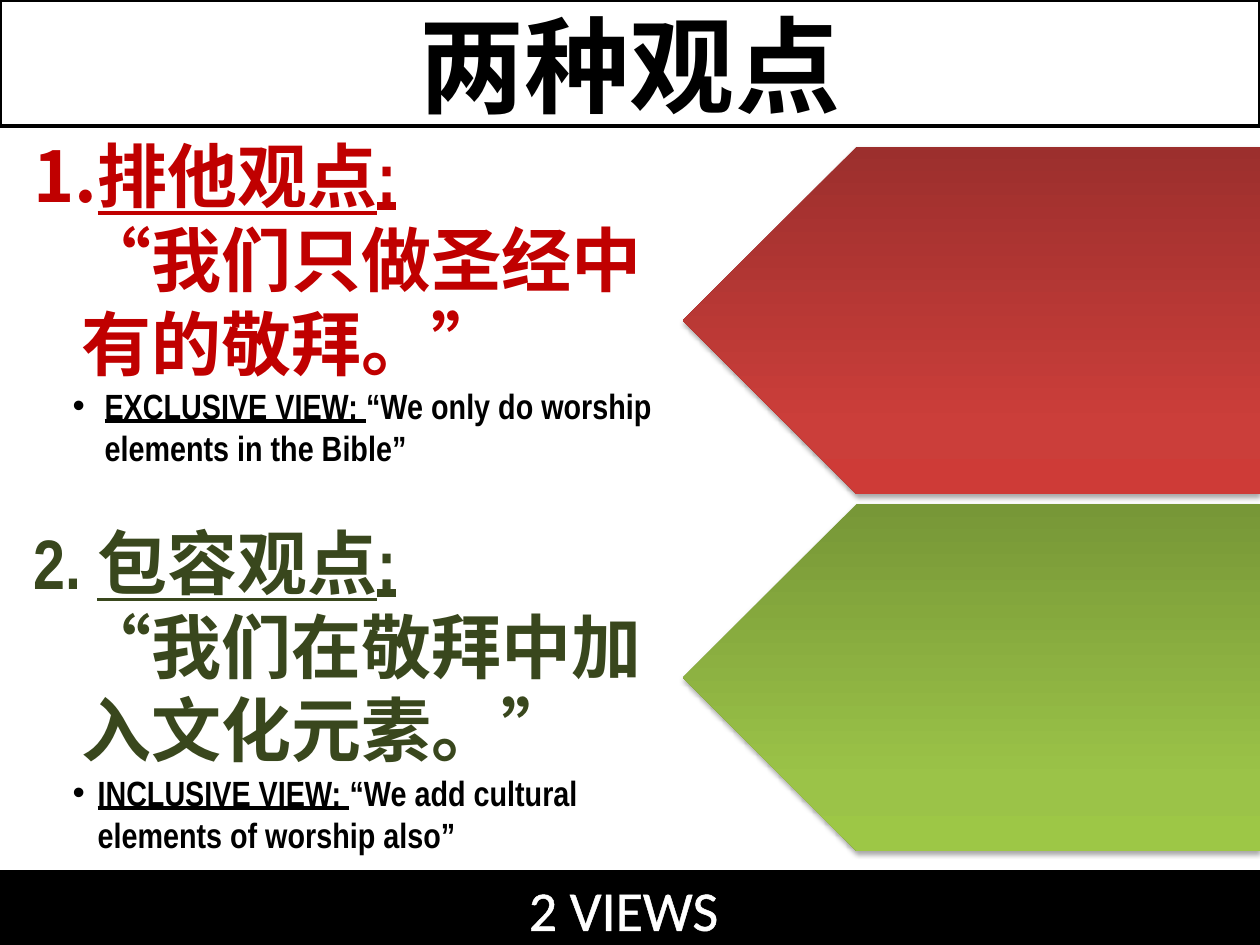
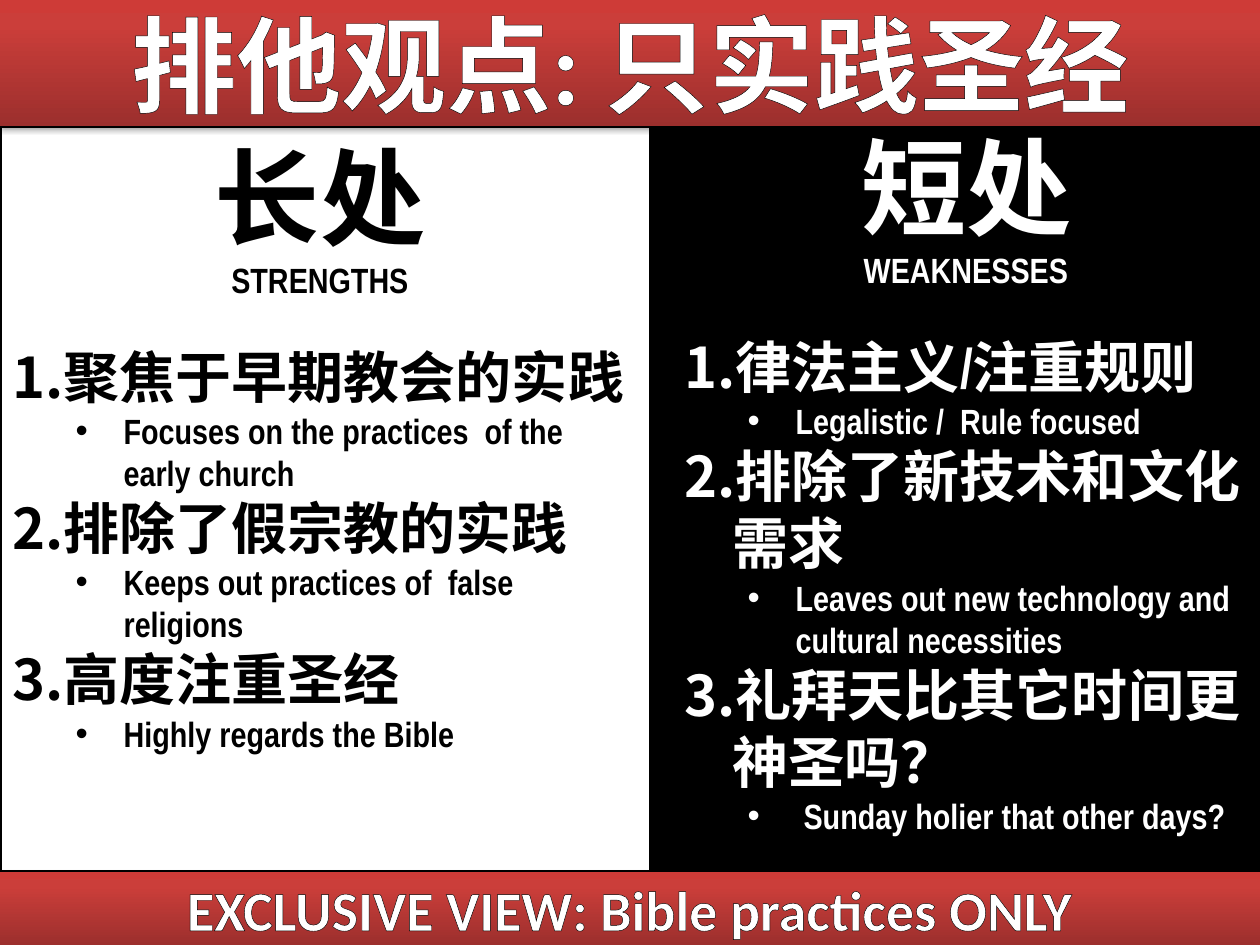
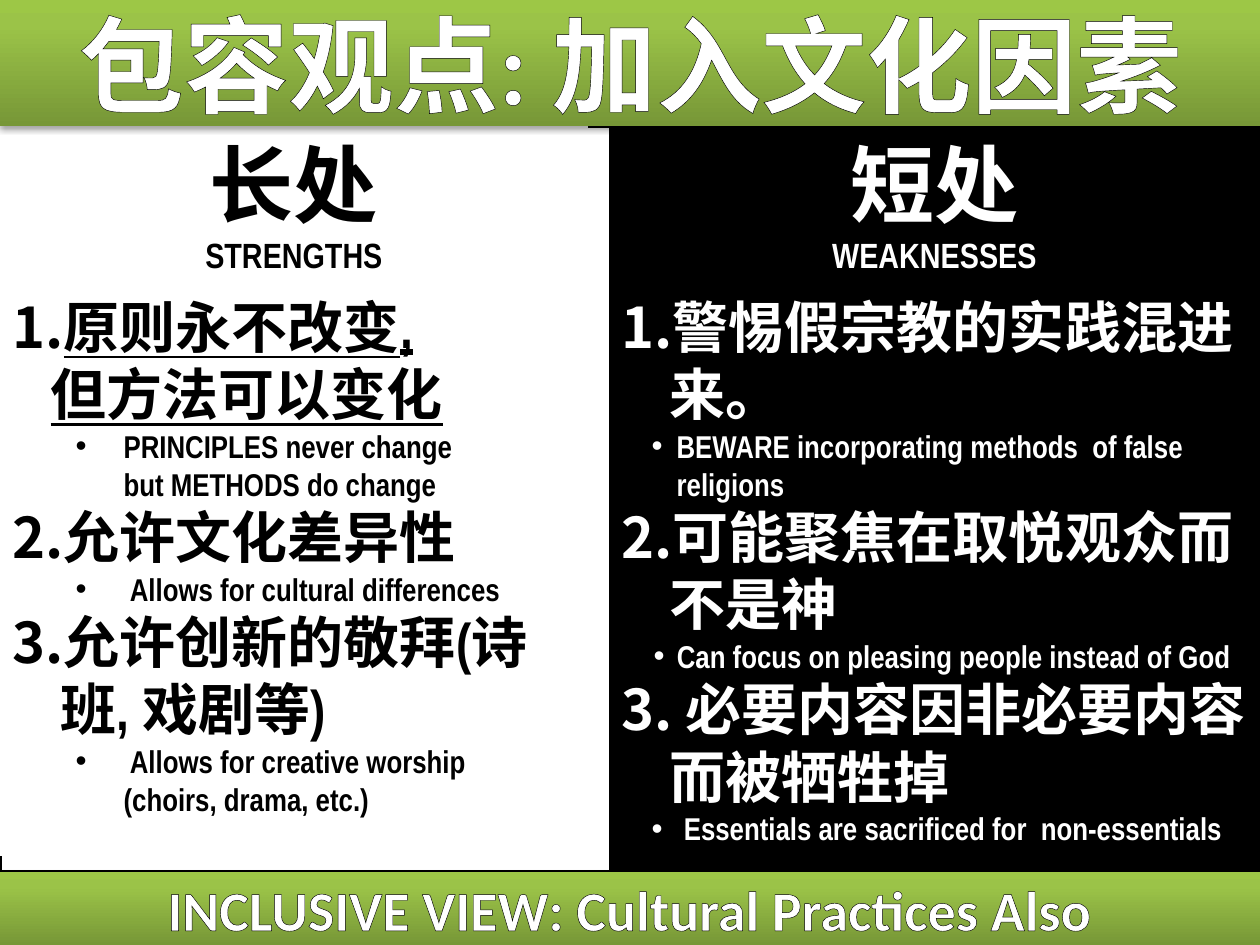
from copy import deepcopy
from dataclasses import dataclass

from lxml import etree
from pptx import Presentation
from pptx.dml.color import RGBColor
from pptx.enum.shapes import MSO_SHAPE
from pptx.enum.text import MSO_ANCHOR, MSO_AUTO_SIZE, PP_ALIGN
from pptx.oxml.ns import qn
from pptx.util import Emu, Inches, Pt

RECTANGLE, PENTAGON = MSO_SHAPE.RECTANGLE, MSO_SHAPE.PENTAGON
TOP, MIDDLE = MSO_ANCHOR.TOP, MSO_ANCHOR.MIDDLE
LEFT, CENTER = PP_ALIGN.LEFT, PP_ALIGN.CENTER
NO_AUTOFIT = MSO_AUTO_SIZE.NONE

PX_PER_INCH = 126
SLIDE_W, SLIDE_H = 1260, 945
BAND_H, FOOTER_TOP = 126, 872
PANEL_H = FOOTER_TOP - BAND_H

COLORS = {
    "black": "000000",
    "white": "FFFFFF",
    "exclusive": "C00000",
    "inclusive": "39471D",
    "title_edge": "5E457C",
}
GRADIENTS = {
    "red": ("9C2F2D", "CB3E3A", "CE3B37"),
    "green": ("779737", "9BC348", "9DC746"),
}
GRADIENT_STOPS = (0, 0.8, 1)
BAND_FONT, LIST_FONT = "Calibri", "Arial Narrow"


@dataclass
class Line:
    """One list paragraph; runs are (text, underlined), lengths are px."""
    runs: list
    size: int
    color: str = "black"
    level: int = 0
    margin: int = 0
    indent: int = 0
    bullet: str = ""
    align: int = LEFT
    before: int = 0


def px(length):
    return Emu(round(length * Inches(1) / PX_PER_INCH))


def rgb(name):
    return RGBColor.from_string(COLORS[name])


def place(shape, left, top, width, height):
    shape.left, shape.top = px(left), px(top)
    shape.width, shape.height = px(width), px(height)


def paint(shape, fill, outlined=False):
    """Fill with a plain colour, or with a gradient that casts a shadow."""
    shape.shadow.inherit = False
    if fill in GRADIENTS:
        paint_gradient(shape, GRADIENTS[fill])
        add_shadow(shape)
    else:
        shape.fill.solid()
        shape.fill.fore_color.rgb = rgb(fill)
    if outlined:
        shape.line.color.rgb = rgb("black")
        shape.line.width = Pt(2)
    else:
        shape.line.fill.background()


def paint_gradient(shape, hues):
    shape.fill.gradient()
    shape.fill.gradient_angle = 90
    stop_list = shape._element.spPr.find(".//" + qn("a:gsLst"))
    stop_list.append(deepcopy(stop_list[-1]))
    for stop, hue, position in zip(shape.fill.gradient_stops, hues, GRADIENT_STOPS):
        stop.color.rgb = RGBColor.from_string(hue)
        stop.position = position


def add_shadow(shape):
    effects = shape._element.spPr.find(qn("a:effectLst"))
    shadow = etree.SubElement(effects, qn("a:outerShdw"), blurRad=str(Pt(3.1)),
                              dist=str(Pt(1.8)), dir="5400000", rotWithShape="0")
    hue = etree.SubElement(shadow, qn("a:srgbClr"), val=COLORS["black"])
    etree.SubElement(hue, qn("a:alpha"), val="35000")


def outline_text(run, color, width):
    edge = etree.Element(qn("a:ln"), w=str(Pt(width)))
    fill = etree.SubElement(edge, qn("a:solidFill"))
    etree.SubElement(fill, qn("a:srgbClr"), val=COLORS[color])
    run.font._element.insert(0, edge)


def write_band(shape, text, size, color, edge, edge_width=1.45, bold=True):
    frame = shape.text_frame
    frame.text = text
    frame.word_wrap = True
    frame.auto_size = NO_AUTOFIT
    frame.vertical_anchor = MIDDLE
    paragraph = frame.paragraphs[0]
    paragraph.alignment = CENTER
    run = paragraph.runs[0]
    run.font.name, run.font.size, run.font.bold = BAND_FONT, Pt(size), bold
    run.font.color.rgb = rgb(color)
    outline_text(run, edge, edge_width)


def add_title(slide, text, fill, color, edge, edge_width=1.45, outlined=False):
    title = slide.shapes.title
    place(title, 0, 0, SLIDE_W, BAND_H)
    paint(title, fill, outlined)
    write_band(title, text, 60, color, edge, edge_width)


def add_block(slide, kind, box, fill, outlined=False):
    block = slide.shapes.add_shape(kind, *map(px, box))
    paint(block, fill, outlined)
    return block


def add_footer(slide, text, fill, edge, bold=True, outlined=False):
    box = (0, FOOTER_TOP, SLIDE_W, SLIDE_H - FOOTER_TOP)
    footer = add_block(slide, RECTANGLE, box, fill, outlined)
    write_band(footer, text, 32, "white", edge, bold=bold)


def add_panels(slide, *panels):
    """Put (left, width, fill, outlined) panels behind the text, back to front."""
    for depth, (left, width, fill, outlined) in enumerate(panels):
        panel = add_block(slide, RECTANGLE, (left, BAND_H, width, PANEL_H), fill, outlined)
        slide.shapes._spTree.insert(2 + depth, panel._element)


def set_bullet(paragraph, bullet):
    properties = paragraph._p.get_or_add_pPr()
    if bullet == "1.":
        etree.SubElement(properties, qn("a:buFont"), typeface="+mj-lt")
        etree.SubElement(properties, qn("a:buAutoNum"), type="arabicPeriod")
    elif bullet:
        etree.SubElement(properties, qn("a:buFont"), typeface="Arial")
        etree.SubElement(properties, qn("a:buChar"), char=bullet)
    else:
        etree.SubElement(properties, qn("a:buNone"))


def write_line(paragraph, line):
    paragraph.level = line.level
    paragraph.alignment = line.align
    paragraph.space_before, paragraph.space_after = Pt(line.before), Pt(0)
    properties = paragraph._p.get_or_add_pPr()
    properties.set("marL", str(px(line.margin)))
    properties.set("indent", str(px(line.indent)))
    set_bullet(paragraph, line.bullet)
    if len(line.runs) == 1:
        paragraph.text = line.runs[0][0]
    else:
        for text, _ in line.runs:
            paragraph.add_run().text = text
    underlines = [underlined for _, underlined in line.runs]
    for index, run in enumerate(paragraph.runs):
        font = run.font
        font.name, font.size, font.bold = LIST_FONT, Pt(line.size), True
        font.underline = underlines[min(index, len(underlines) - 1)]
        font.color.rgb = rgb(line.color)


def fill_list(body, box, lines):
    place(body, *box)
    frame = body.text_frame
    frame.word_wrap = True
    frame.auto_size = NO_AUTOFIT
    frame.vertical_anchor = TOP
    for index, line in enumerate(lines):
        write_line(frame.add_paragraph() if index else frame.paragraphs[0], line)


def point(text, color, underlined=False, before=0):
    return Line([(text, underlined)], 32, color, 0, 48, -48, "1.", before=before)


def gloss(text, size, color, margin=111, indent=-48):
    """English rendering below a Chinese point."""
    return Line([(text, False)], size, color, 1, margin, indent, "•")


def heading(chinese, english, size, color):
    return [Line([(chinese, False)], size, color, align=CENTER),
            Line([(english, False)], 20, color, align=CENTER)]


def quote(text, color):
    return Line([(text, False)], 40, color, margin=48)


def view_gloss(label, text, margin, indent):
    return Line([(label, True), (text, False)], 20, "black", 1, margin, indent, "•")


def build_two_views(prs):
    slide = prs.slides.add_slide(prs.slide_layouts[1])
    add_title(slide, "两种观点", "white", "black", "title_edge", 0.71, outlined=True)
    fill_list(slide.placeholders[1], (21, 126, 662, 742), [
        Line([("排他观点:", True)], 40, "exclusive", 0, 48, -48, "1."),
        quote("“我们只做圣经中有的敬拜。”", "exclusive"),
        view_gloss("EXCLUSIVE VIEW: ", "“We only do worship elements in the Bible”", 71, -32),
        Line([("2. ", False), ("包容观点:", True)], 40, "inclusive", 0, 48, -48, before=29),
        quote("“我们在敬拜中加入文化元素。”", "inclusive"),
        view_gloss("INCLUSIVE VIEW: ", "“We add cultural elements of worship also”", 64, -25),
    ])
    for top, fill in ((147, "red"), (504, "green")):
        arrow = add_block(slide, PENTAGON, (683, top, 577, 347), fill)
        arrow.rotation = 180
    add_footer(slide, "2 VIEWS ", "black", "white", bold=False, outlined=True)


def build_exclusive_view(prs):
    slide = prs.slides.add_slide(prs.slide_layouts[3])
    add_panels(slide, (651, 609, "black", False), (0, 651, "white", True))
    add_title(slide, "排他观点: 只实践圣经", "red", "white", "black")
    fill_list(slide.placeholders[1], (0, 126, 640, 640), [
        *heading("长处", "STRENGTHS", 60, "black"),
        point("聚焦于早期教会的实践", "black", before=24),
        gloss("Focuses on the practices  of the early church", 20, "black"),
        point("排除了假宗教的实践", "black"),
        gloss("Keeps out practices of  false religions", 20, "black"),
        point("高度注重圣经", "black"),
        gloss("Highly regards the Bible", 20, "black"),
    ])
    fill_list(slide.placeholders[2], (672, 116, 588, 733), [
        *heading("短处", "WEAKNESSES", 60, "white"),
        point("律法主义/注重规则", "white", before=24),
        gloss("Legalistic /  Rule focused", 20, "white"),
        point("排除了新技术和文化需求", "white"),
        gloss("Leaves out new technology and cultural necessities", 20, "white"),
        point("礼拜天比其它时间更神圣吗？", "white"),
        gloss(" Sunday holier that other days?", 20, "white"),
    ])
    add_footer(slide, "EXCLUSIVE VIEW: Bible practices ONLY", "red", "black")


def build_inclusive_view(prs):
    slide = prs.slides.add_slide(prs.slide_layouts[3])
    add_panels(slide, (0, 651, "white", True), (609, 651, "black", False))
    strengths, weaknesses = slide.placeholders[1], slide.placeholders[2]
    fill_list(strengths, (0, 126, 588, 730), [
        *heading("长处", "STRENGTHS", 48, "black"),
        point("原则永不改变,", "black", underlined=True, before=10),
        Line([("但方法可以变化", True)], 32, margin=38),
        gloss("PRINCIPLES never change\vbut METHODS do change", 18, "black"),
        point("允许文化差异性", "black"),
        gloss(" Allows for cultural differences", 18, "black"),
        point("允许创新的敬拜(诗班, 戏剧等)", "black"),
        gloss(" Allows for creative worship\v(choirs, drama, etc.)", 18, "black"),
    ])
    paint(strengths, "white")
    add_title(slide, "包容观点: 加入文化因素", "green", "white", "black")
    slide.shapes._spTree.append(slide.shapes.title._element)
    fill_list(weaknesses, (609, 126, 651, 758), [
        *heading("短处", "WEAKNESSES", 48, "white"),
        point("警惕假宗教的实践混进来。", "white", before=10),
        gloss("BEWARE incorporating methods  of false religions", 18, "white", 55, -25),
        point("可能聚焦在取悦观众而不是神", "white"),
        gloss(" Can focus on pleasing people instead of God", 18, "white", 48, -16),
        point(" 必要内容因非必要内容而被牺牲掉", "white"),
        gloss(" Essentials are sacrificed for  non-essentials", 18, "white", 55, -25),
    ])
    add_footer(slide, "INCLUSIVE VIEW: Cultural Practices Also", "green", "black")


def main():
    prs = Presentation()
    prs.slide_width, prs.slide_height = px(SLIDE_W), px(SLIDE_H)
    build_two_views(prs)
    build_exclusive_view(prs)
    build_inclusive_view(prs)
    prs.save("out.pptx")


if __name__ == "__main__":
    main()
